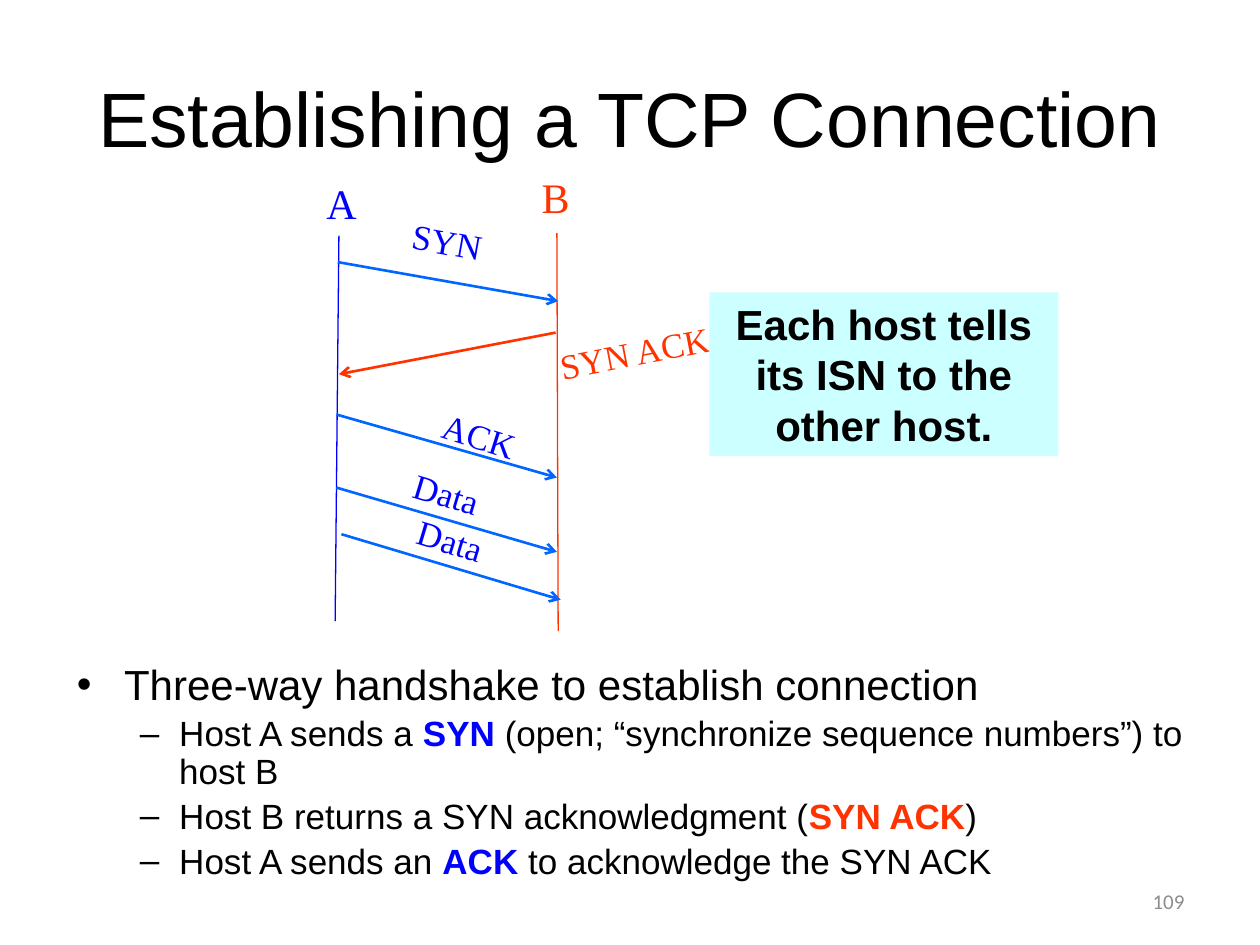
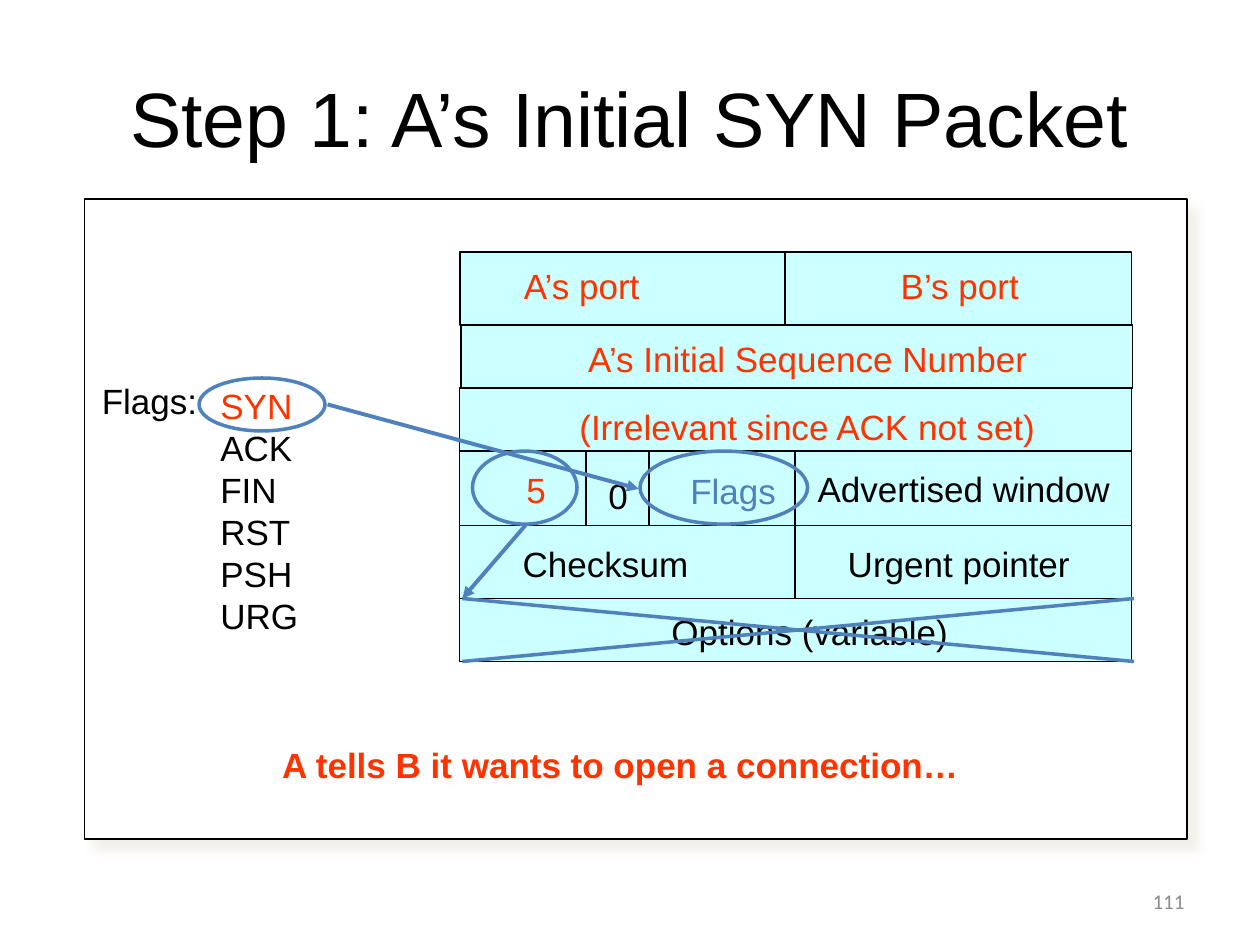
from lxml import etree
from pptx import Presentation
from pptx.dml.color import RGBColor
from pptx.enum.shapes import MSO_CONNECTOR, MSO_SHAPE
from pptx.enum.text import MSO_ANCHOR, MSO_AUTO_SIZE, PP_ALIGN
from pptx.oxml.ns import qn
from pptx.util import Inches, Pt

LEFT, CENTER, RIGHT = PP_ALIGN.LEFT, PP_ALIGN.CENTER, PP_ALIGN.RIGHT
TOP, MIDDLE = MSO_ANCHOR.TOP, MSO_ANCHOR.MIDDLE
RECT, OVAL = MSO_SHAPE.RECTANGLE, MSO_SHAPE.OVAL
STRAIGHT = MSO_CONNECTOR.STRAIGHT
NO_FIT = MSO_AUTO_SIZE.NONE

THEME = {
    "black": "000000", "white": "FFFFFF", "grey": "8C8C8C",
    "blue": "0000FF", "arrow": "0066FF", "red": "FF3300",
    "cyan": "CCFFFF", "accent": "4F81BD", "shadow": "EEECE1",
    "sans": "Arial", "serif": "Times New Roman", "footer": "Calibri",
    "title": 44, "large": 24, "text": 20, "small": 12,
}
RGB = {name: RGBColor.from_string(v) for name, v in THEME.items()
       if isinstance(v, str) and len(v) == 6}


def put_text(sp, paras, size="text", font="sans", align=LEFT, anchor=TOP, wrap=False):
    """Write paragraphs, each a list of (text, colour, bold) runs."""
    tf = sp.text_frame
    frame = {"word_wrap": wrap, "vertical_anchor": anchor, "auto_size": NO_FIT}
    for name, value in frame.items():
        setattr(tf, name, value)
    for i, runs in enumerate(paras):
        p = tf.paragraphs[0] if i == 0 else tf.add_paragraph()
        p.alignment = align
        for text, color, bold in runs:
            r = p.add_run()
            r.text = text
            r.font.color.rgb = RGB[color]
            fmt = {"name": THEME[font], "size": Pt(THEME[size]), "bold": bold}
            for name, value in fmt.items():
                setattr(r.font, name, value)
    return tf


def add_line(s, ends, color, width, head=None):
    """Draw a straight line from (x1, y1) to (x2, y2), with an arrowhead if named."""
    cn = s.shapes.add_connector(STRAIGHT, *map(Inches, ends))
    cn.line.color.rgb = RGB[color]
    cn.line.width = Pt(width)
    if head:
        etree.SubElement(cn.line._get_or_add_ln(), qn("a:tailEnd"), type=head)
    etree.SubElement(cn._element.spPr, qn("a:effectLst"))


prs = Presentation()
prs.slide_width, prs.slide_height = Inches(10), Inches(7.5)

# Shared parts: title and slide number
slides = []
for layout, title, number in [
    (1, "Establishing a TCP Connection", "109"),
    (5, "Step 1: A’s Initial SYN Packet", "111"),
]:
    s = prs.slides.add_slide(prs.slide_layouts[layout])
    sp = s.shapes.title
    sp.left, sp.top, sp.width, sp.height = map(Inches, (0.5, 0.3, 9, 1.25))
    put_text(sp, [[(title, "black", False)]], "title", align=CENTER, anchor=MIDDLE, wrap=True)
    sp = s.shapes.add_textbox(*map(Inches, (7.17, 6.95, 2.33, 0.4)))
    put_text(sp, [[(number, "grey", False)]], "small", "footer", RIGHT, MIDDLE, True)
    slides.append(s)
handshake, packet = slides

# Slide 1: handshake list
body = handshake.placeholders[1]
body.left, body.top, body.width, body.height = map(Inches, (0.51, 5.22, 9.25, 2.12))
tf = put_text(body, [
    [("Three-way handshake to establish connection", "black", False)],
    [("Host A sends a ", "black", False), ("SYN", "blue", True),
     (" (open; “synchronize sequence numbers”) to host B", "black", False)],
    [("Host B returns a SYN acknowledgment (", "black", False), ("SYN ACK", "red", True),
     (")", "black", False)],
    [("Host A sends an ", "black", False), ("ACK", "blue", True),
     (" to acknowledge the SYN ACK", "black", False)],
], wrap=True)
for i, p in enumerate(tf.paragraphs):
    p.level = min(i, 1)
    p.line_spacing = 0.9
for r in tf.paragraphs[0].runs:
    r.font.size = Pt(THEME["large"])

# Slide 1: timelines of the hosts and messages between them
for ends, color, width, head in [
    ((4.42, 1.85, 4.43, 5.01), "red", 0.75, None),
    ((2.69, 1.87, 2.66, 4.93), "blue", 0.75, None),
    ((2.68, 2.08, 4.43, 2.39), "arrow", 1.5, "arrow"),
    ((4.41, 2.64, 2.69, 2.97), "red", 1.5, "arrow"),
    ((2.67, 3.29, 4.42, 3.79), "arrow", 1.5, "arrow"),
    ((2.67, 3.87, 4.42, 4.38), "arrow", 1.5, "arrow"),
    ((2.71, 4.24, 4.45, 4.76), "arrow", 1.5, "arrow"),
]:
    add_line(handshake, ends, color, width, head)

for text, box, angle, color, size in [
    ("A", (2.49, 1.36, 0.44, 0.5), 0, "blue", "large"),
    ("B", (4.2, 1.31, 0.42, 0.5), 0, "red", "large"),
    ("SYN", (3.17, 1.7, 0.76, 0.43), 10.1, "blue", "text"),
    ("SYN ACK", (4.32, 2.58, 1.43, 0.43), -10.9, "red", "text"),
    ("ACK", (3.41, 3.24, 0.79, 0.43), 17.4, "blue", "text"),
    ("Data", (3.18, 3.7, 0.73, 0.43), 16.7, "blue", "text"),
    ("Data", (3.21, 4.07, 0.73, 0.43), 16.7, "blue", "text"),
]:
    sp = handshake.shapes.add_textbox(*map(Inches, box))
    sp.rotation = angle
    put_text(sp, [[(text, color, False)]], size, "serif", CENTER, MIDDLE)

# Slide 1: callout
sp = handshake.shapes.add_textbox(*map(Inches, (5.63, 2.32, 2.77, 1.3)))
sp.fill.solid()
sp.fill.fore_color.rgb = RGB["cyan"]
put_text(sp, [[("Each host tells its ISN to the other host.", "black", True)]],
         "large", align=CENTER, wrap=True)

# Slide 2: panel and header fields, as (left, top, width, height)
ROW_TOPS = [2, 2.58, 3.08, 3.58, 4.17, 4.75, 5.25]
ROW_CELLS = [
    [(3.65, 2.58), (6.23, 2.75)],
    [(3.66, 5.33)],
    [(3.65, 5.33)],
    [(3.65, 2.67), (6.31, 2.67)],
    [(3.65, 2.67), (6.31, 2.67)],
    [(3.65, 5.33)],
]
boxes = [((0.67, 1.58, 8.75, 5.08), "white")]
for top, bottom, cells in zip(ROW_TOPS, ROW_TOPS[1:], ROW_CELLS):
    boxes += [((x, top, w, bottom - top), "cyan") for x, w in cells]
rects = []
for box, color in boxes:
    sp = packet.shapes.add_shape(RECT, *map(Inches, box))
    sp.shadow.inherit = False
    sp.fill.solid()
    sp.fill.fore_color.rgb = RGB[color]
    sp.line.color.rgb = RGB["black"]
    sp.line.width = Pt(0.75)
    rects.append(sp)

# Panel shadow
effects = rects[0]._element.spPr.find(qn("a:effectLst"))
shadow = etree.SubElement(effects, qn("a:outerShdw"), blurRad=str(Pt(5)), dist=str(Pt(8.5)),
                          dir="2700000", algn="tl", rotWithShape="0")
tint = etree.SubElement(shadow, qn("a:srgbClr"), val=THEME["shadow"])
etree.SubElement(tint, qn("a:alpha"), val="75000")

for x in (4.65, 5.15):
    add_line(packet, (x, 3.58, x, 4.17), "black", 0.75)

# Slide 2: labels
for text, box, color, align, bold in [
    ("A’s port", (4.06, 2.05, 1.16, 0.44), "red", LEFT, False),
    ("B’s port", (7.05, 2.05, 1.14, 0.44), "red", LEFT, False),
    ("A’s Initial Sequence Number", (4.57, 2.63, 3.75, 0.44), "red", LEFT, False),
    ("(Irrelevant since ACK not set)", (4.5, 3.17, 3.83, 0.43), "red", LEFT, False),
    ("5", (3.67, 3.67, 1.17, 0.43), "red", CENTER, False),
    ("0", (4.73, 3.72, 0.36, 0.43), "black", LEFT, False),
    ("Flags", (5.38, 3.68, 0.88, 0.43), "accent", LEFT, False),
    ("Advertised window", (6.39, 3.66, 2.52, 0.43), "black", LEFT, False),
    ("Checksum", (4.05, 4.26, 1.51, 0.43), "black", LEFT, False),
    ("Urgent pointer", (6.63, 4.26, 1.96, 0.43), "black", LEFT, False),
    ("Options (variable)", (5.23, 4.8, 2.39, 0.43), "black", LEFT, False),
    ("Flags:", (0.71, 2.96, 0.96, 0.43), "black", LEFT, False),
    ("A tells B it wants to open a connection…", (2.14, 5.85, 5.57, 0.43), "red", CENTER, True),
]:
    sp = packet.shapes.add_textbox(*map(Inches, box))
    put_text(sp, [[(text, color, bold)]], align=align)

sp = packet.shapes.add_textbox(*map(Inches, (1.65, 3, 0.82, 2.1)))
put_text(sp, [[(flag, "red" if flag == "SYN" else "black", False)]
              for flag in ("SYN", "ACK", "FIN", "RST", "PSH", "URG")])

# Slide 2: rings, pointers and the crossed-out options
for box in [(5.08, 3.58, 1.33, 0.58), (1.58, 3, 1, 0.42), (3.75, 3.58, 0.83, 0.58)]:
    sp = packet.shapes.add_shape(OVAL, *map(Inches, box))
    sp.shadow.inherit = False
    sp.fill.background()
    sp.line.color.rgb = RGB["accent"]
    sp.line.width = Pt(2)

for ends, width, head in [
    ((2.6, 3.21, 5.07, 3.88), 2.25, "triangle"),
    ((3.67, 4.75, 9, 5.25), 2, None),
    ((3.67, 5.25, 9, 4.75), 2, None),
    ((4.17, 4.17, 3.67, 4.75), 2.25, "triangle"),
]:
    add_line(packet, ends, "accent", width, head)

prs.save("out.pptx")
